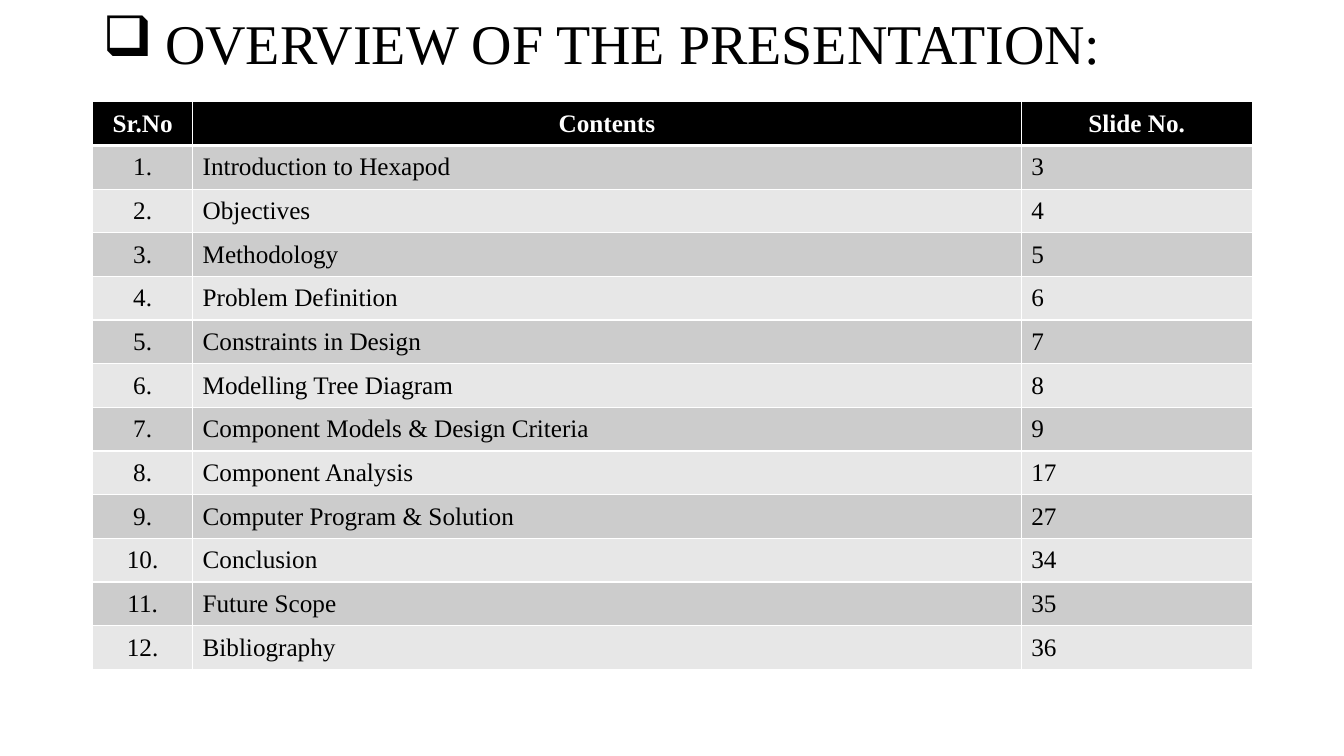
import dataclasses

import lxml.etree
import pptx
import pptx.dml.color
import pptx.enum.text
import pptx.oxml.ns
import pptx.util

Inches = pptx.util.Inches
ALIGN = pptx.enum.text.PP_ALIGN
ANCHOR = pptx.enum.text.MSO_ANCHOR

FONT = "Times New Roman"
BLACK, WHITE = "000000", "FFFFFF"
BAND_FILLS = ("CCCCCC", "E7E7E7")
LEFT, WIDTH = 0.92, 11.5
TABLE_TOP, TABLE_HEIGHT = 1.01, 5.63
COLUMN_WIDTHS = (0.99, 8.22, 2.29)
TITLE_INDENT = 0.62
HEADINGS = ("Sr.No", "Contents", "Slide No.")


@dataclasses.dataclass(frozen=True)
class Topic:
    name: str
    slide_number: int


@dataclasses.dataclass(frozen=True)
class CellStyle:
    fill: str
    color: str = BLACK
    bold: bool = False
    alignment: ALIGN = ALIGN.LEFT
    bottom_border: float = 1


TOPICS = (
    Topic("Introduction to Hexapod", 3),
    Topic("Objectives", 4),
    Topic("Methodology", 5),
    Topic("Problem Definition", 6),
    Topic("Constraints in Design", 7),
    Topic("Modelling Tree Diagram", 8),
    Topic("Component Models & Design Criteria", 9),
    Topic("Component Analysis", 17),
    Topic("Computer Program & Solution", 27),
    Topic("Conclusion", 34),
    Topic("Future Scope", 35),
    Topic("Bibliography", 36),
)


def rgb(value: str) -> pptx.dml.color.RGBColor:
    return pptx.dml.color.RGBColor.from_string(value)


def apply_format(target, values: dict) -> None:
    for name, value in values.items():
        setattr(target, name, value)


def add_element(parent, tag: str, **attributes: str):
    return lxml.etree.SubElement(parent, pptx.oxml.ns.qn(tag), attributes)


def write_text(paragraph, text: str, size: float, color: str, bold: bool = False) -> None:
    run = paragraph.add_run()
    run.text = text
    apply_format(run.font, {"name": FONT, "size": pptx.util.Pt(size), "bold": bold})
    run.font.color.rgb = rgb(color)


def add_border(cell, side: str, width: float) -> None:
    properties = cell._tc.get_or_add_tcPr()
    line = add_element(properties, f"a:ln{side}", w=str(pptx.util.Pt(width)))
    add_element(add_element(line, "a:solidFill"), "a:srgbClr", val=WHITE)


def fill_cell(cell, text: str, style: CellStyle) -> None:
    # Borders come before the fill in the cell properties.
    for side in "LRT":
        add_border(cell, side, 1)
    add_border(cell, "B", style.bottom_border)
    cell.fill.solid()
    cell.fill.fore_color.rgb = rgb(style.fill)
    cell.vertical_anchor = ANCHOR.MIDDLE
    paragraph = cell.text_frame.paragraphs[0]
    paragraph.alignment = style.alignment
    write_text(paragraph, text, 18, style.color, style.bold)


def add_title(slide) -> None:
    box = slide.shapes.add_textbox(Inches(LEFT), Inches(0), Inches(WIDTH), Inches(0.81))
    apply_format(box.text_frame, {"word_wrap": True, "vertical_anchor": ANCHOR.BOTTOM})
    paragraph = box.text_frame.paragraphs[0]
    paragraph.line_spacing = 0.9
    properties = paragraph._p.get_or_add_pPr()
    properties.set("marL", str(Inches(TITLE_INDENT)))
    properties.set("indent", str(-Inches(TITLE_INDENT)))
    add_element(properties, "a:buChar", char="❑")
    write_text(paragraph, "OVERVIEW OF THE PRESENTATION:", 40, BLACK)


def add_contents_table(slide) -> None:
    row_count = len(TOPICS) + 1
    table = slide.shapes.add_table(
        row_count, len(HEADINGS),
        Inches(LEFT), Inches(TABLE_TOP), Inches(WIDTH), Inches(TABLE_HEIGHT),
    ).table
    for column, width in zip(table.columns, COLUMN_WIDTHS):
        column.width = Inches(width)
    for row in table.rows:
        row.height = Inches(TABLE_HEIGHT / row_count)

    heading_style = CellStyle(BLACK, WHITE, True, ALIGN.CENTER, 3)
    for column, heading in enumerate(HEADINGS):
        fill_cell(table.cell(0, column), heading, heading_style)

    for number, topic in enumerate(TOPICS, start=1):
        style = CellStyle(BAND_FILLS[(number - 1) % 2])
        centered = dataclasses.replace(style, alignment=ALIGN.CENTER)
        fill_cell(table.cell(number, 0), f"{number}.", centered)
        fill_cell(table.cell(number, 1), topic.name, style)
        fill_cell(table.cell(number, 2), str(topic.slide_number), style)


def main() -> None:
    presentation = pptx.Presentation()
    apply_format(presentation, {"slide_width": Inches(13.33), "slide_height": Inches(7.5)})
    slide = presentation.slides.add_slide(presentation.slide_layouts[6])
    add_title(slide)
    add_contents_table(slide)
    presentation.save("out.pptx")


if __name__ == "__main__":
    main()
